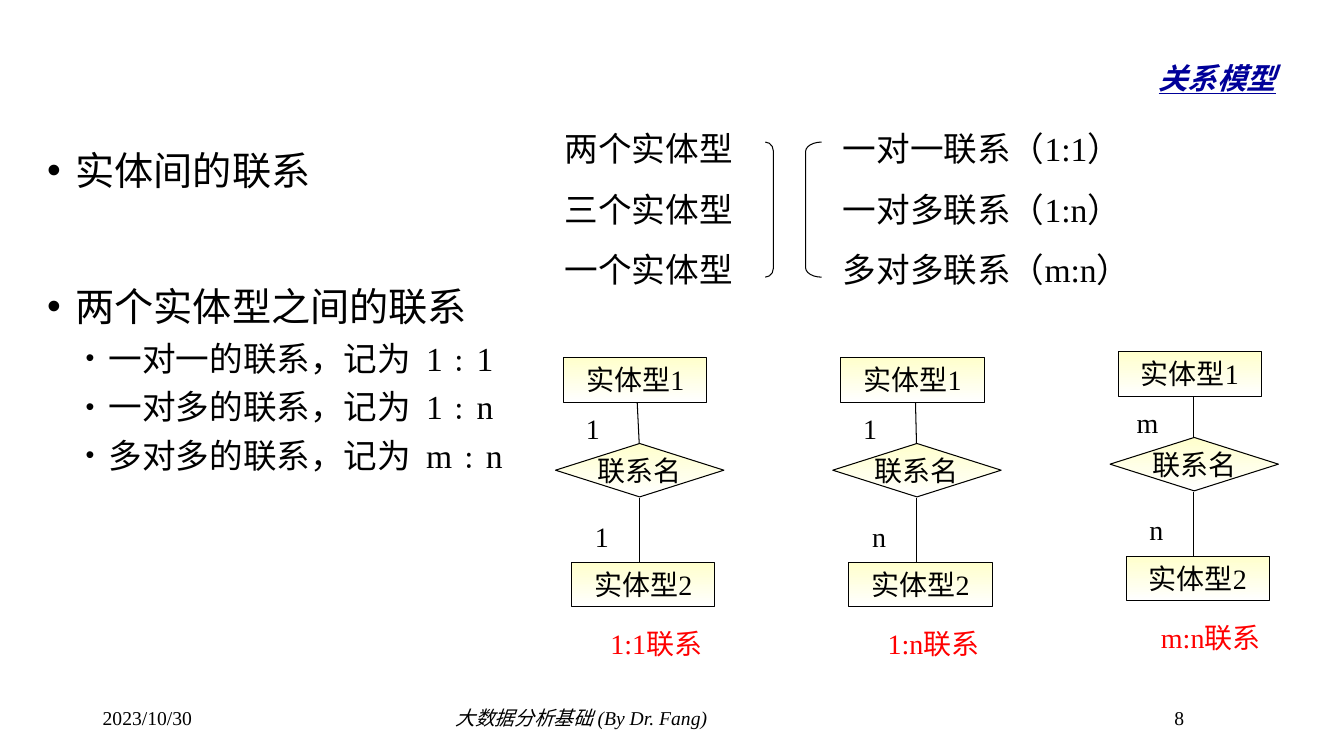
import lxml.etree
import pptx
import pptx.dml.color
import pptx.enum.shapes
import pptx.enum.text
import pptx.oxml.ns
import pptx.util

Inches = pptx.util.Inches
Shape = pptx.enum.shapes.MSO_SHAPE
Align = pptx.enum.text.PP_ALIGN
Anchor = pptx.enum.text.MSO_ANCHOR
qn = pptx.oxml.ns.qn

COLORS = {"ink": "000000", "title": "000099", "caption": "FF0000",
          "cream": "FFFFCC", "white": "FFFFFF"}


def rgb(name):
    return pptx.dml.color.RGBColor.from_string(COLORS[name])


def write_para(para, text, *, size=20, color="ink", font="Times New Roman", bold=False,
               italic=False, underline=False, baseline=None, align=Align.LEFT,
               spacing=1.0, before=0, bullet=None, tab=None):
    """Fill one paragraph; bullet is (margin, hanging, size percent), tab is inches."""
    para.alignment = align
    para.line_spacing = spacing
    para.space_before = pptx.util.Pt(before)
    props = para._p.get_or_add_pPr()
    if bullet:
        margin, hanging, percent = bullet
        props.set("marL", str(Inches(margin)))
        props.set("indent", str(-Inches(hanging)))
        lxml.etree.SubElement(props, qn("a:buSzPct"), val=str(percent * 1000))
        lxml.etree.SubElement(props, qn("a:buFont"), typeface="Arial")
        lxml.etree.SubElement(props, qn("a:buChar"), char="•")
    if tab:
        stops = lxml.etree.SubElement(props, qn("a:tabLst"))
        lxml.etree.SubElement(stops, qn("a:tab"), pos=str(Inches(tab)), algn="l")
    span = para.add_run()
    span.text = text
    span.font.name = font
    span.font.size = pptx.util.Pt(size)
    span.font.bold = bold
    span.font.italic = italic
    span.font.underline = underline
    span.font.color.rgb = rgb(color)
    if baseline:
        span._r.get_or_add_rPr().set("baseline", str(baseline * 1000))


class SlideBuilder:
    def __init__(self, page, line_width=0.75):
        self.page = page
        self.line_width = pptx.util.Pt(line_width)

    def outline(self, line):
        line.color.rgb = rgb("ink")
        line.width = self.line_width

    def text(self, left, top, width, height, rows, anchor=Anchor.TOP, inset=0.1, **style):
        """Rows are strings or (string, format) pairs."""
        box = self.page.shapes.add_textbox(*map(Inches, (left, top, width, height)))
        frame = box.text_frame
        frame.word_wrap = True
        frame.vertical_anchor = anchor
        frame.margin_left = Inches(inset)
        for index, row in enumerate(rows):
            para = frame.add_paragraph() if index else frame.paragraphs[0]
            text, extra = (row, {}) if isinstance(row, str) else row
            write_para(para, text, **{**style, **extra})

    def bracket(self, kind, left, top, width, height, curve):
        shape = self.page.shapes.add_shape(kind, *map(Inches, (left, top, width, height)))
        shape.shadow.inherit = False
        shape.adjustments[0] = curve
        shape.fill.background()
        self.outline(shape.line)

    def node(self, kind, left, top, width, height, text, anchor=Anchor.TOP, wrap=True):
        shape = self.page.shapes.add_shape(kind, *map(Inches, (left, top, width, height)))
        shape.shadow.inherit = False
        shape.fill.gradient()
        shape.fill.gradient_angle = 270
        for stop, position, name in zip(shape.fill.gradient_stops, (0, 1), ("cream", "white")):
            stop.position = position
            stop.color.rgb = rgb(name)
        self.outline(shape.line)
        frame = shape.text_frame
        frame.word_wrap = wrap
        frame.vertical_anchor = anchor
        write_para(frame.paragraphs[0], text, align=Align.CENTER)

    def line(self, *ends):
        straight = pptx.enum.shapes.MSO_CONNECTOR.STRAIGHT
        connector = self.page.shapes.add_connector(straight, *map(Inches, ends))
        self.outline(connector.line)
        lxml.etree.SubElement(connector._element.spPr, qn("a:effectLst"))

    def relation(self, left, top, first, second, lean):
        """One entity-relationship diagram, placed by its diamond's corner."""
        middle = left + 0.83
        self.node(Shape.RECTANGLE, left + 0.08, top - 0.85, 1.42, 0.44, "实体型1")
        self.node(Shape.DIAMOND, left, top, 1.67, 0.53, "联系名", Anchor.MIDDLE, False)
        self.node(Shape.RECTANGLE, left + 0.16, top + 1.18, 1.42, 0.44, "实体型2")
        self.line(middle, top, middle - lean, top - 0.41)
        self.line(middle, top + 0.54, middle, top + 1.18)
        # The caption's left part names the kind of relation
        kind = f"{'m' if first == 'm' else '1'}:{second}联系"
        for dx, dy, width, text, color in ((0.16, -0.37, 0.42, first, "ink"),
                                           (0.25, 0.70, 0.42, second, "ink"),
                                           (0.25, 1.77, 1.5, kind, "caption")):
            self.text(left + dx, top + dy, width, 0.43, [text],
                      align=Align.CENTER, color=color)


def main():
    deck = pptx.Presentation()
    deck.slide_width, deck.slide_height = Inches(13.33), Inches(7.5)
    builder = SlideBuilder(deck.slides.add_slide(deck.slide_layouts[6]))

    # Title
    builder.text(1.94, 0.05, 10.81, 1.1, ["关系模型"], anchor=Anchor.MIDDLE, size=36,
                 color="title", bold=True, italic=True, underline=True, baseline=-25,
                 align=Align.RIGHT)

    # Bulleted outline
    main_point = {"size": 28, "bullet": (0.28, 0.28, 100)}
    sub_point = {"size": 24, "bullet": (0.61, 0.23, 75)}
    builder.text(0.37, 1.31, 12.6, 5.59, [
        ("实体间的联系", main_point),
        ("两个实体型之间的联系", {**main_point, "before": 57}),
        ("一对一的联系，记为  1﹕1", sub_point),
        ("一对多的联系，记为  1﹕n", sub_point),
        ("多对多的联系，记为  m﹕n", sub_point)], spacing=1.2)

    # Entity counts and relation kinds
    builder.text(5.27, 1.02, 7.15, 1.92, [
        "两个实体型\t一对一联系（1:1）",
        "三个实体型\t一对多联系（1:n）",
        "一个实体型\t多对多联系（m:n）"], inset=0.33, size=24, spacing=1.5, tab=2.76)
    builder.bracket(Shape.LEFT_BRACKET, 7.99, 1.41, 0.16, 1.34, 0.59)
    builder.bracket(Shape.RIGHT_BRACKET, 7.59, 1.41, 0.08, 1.34, 1.1)

    # Relationship diagrams
    diagrams = (("1", "1", 4.4, 0.02), ("1", "n", 4.4, 0.01), ("m", "n", 4.34, 0))
    for index, (first, second, top, lean) in enumerate(diagrams):
        builder.relation(5.51 + 2.75 * index, top, first, second, lean)

    # Footer
    builder.text(0.92, 6.95, 3, 0.4, ["2023/10/30"], size=14)
    builder.text(4.42, 6.95, 6.42, 0.4, ["大数据分析基础 (By Dr. Fang)"], size=14, italic=True)
    builder.text(11.55, 6.95, 0.87, 0.4, ["8"], size=14)

    deck.save("out.pptx")


if __name__ == "__main__":
    main()
